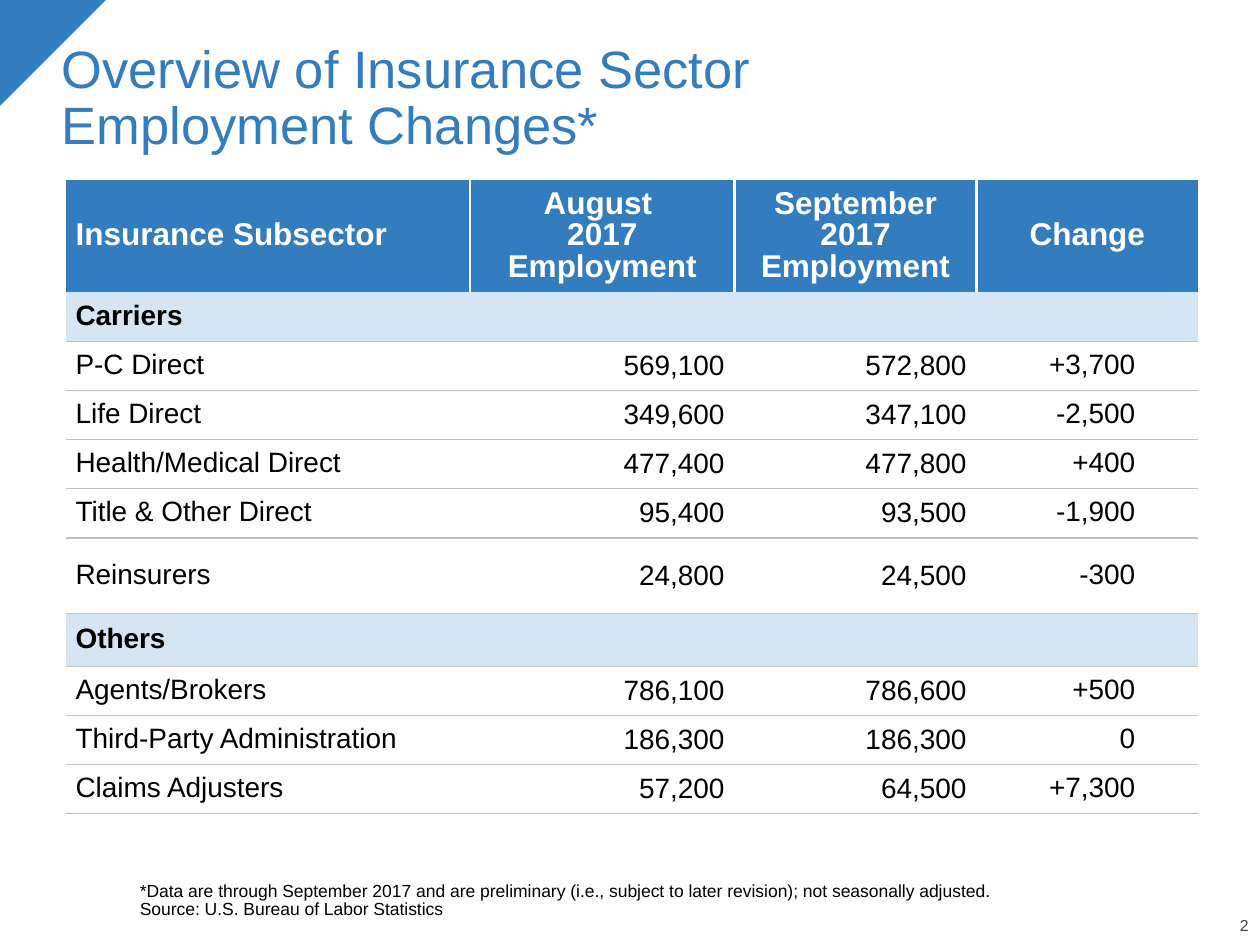
from typing import NamedTuple

from lxml import etree
from pptx import Presentation
from pptx.dml.color import RGBColor
from pptx.enum import shapes, text
from pptx.oxml import ns
from pptx.util import Inches, Pt

BLUE = RGBColor(0x33, 0x7D, 0xBE)
PALE_BLUE = RGBColor(0xD5, 0xE5, 0xF4)
GRAY = RGBColor(0xBF, 0xBF, 0xBF)
DARK_GRAY = RGBColor(0x40, 0x40, 0x40)
WHITE = RGBColor(0xFF, 0xFF, 0xFF)
BLACK = RGBColor(0, 0, 0)

LEFT, CENTER, RIGHT = text.PP_ALIGN.LEFT, text.PP_ALIGN.CENTER, text.PP_ALIGN.RIGHT
BOTTOM, MIDDLE = text.MSO_ANCHOR.BOTTOM, text.MSO_ANCHOR.MIDDLE
NO_GRID_STYLE = "{2D5ABB26-0587-4C30-8999-92F81FD0307C}"
COLUMN_WIDTHS = (3.21, 2.10, 1.92, 1.76)


class Row(NamedTuple):
    label: str
    august: str = ""
    september: str = ""
    change: str = ""
    height: float = 0.39

    @property
    def is_section(self) -> bool:
        return not self.august


HEADER = Row("Insurance Subsector", "August \v2017\nEmployment",
             "September\v2017\nEmployment", "Change", 0.89)
ROWS = (
    Row("Carriers"),
    Row("P-C Direct", "569,100", "572,800", "+3,700"),
    Row("Life Direct", "349,600", "347,100", "-2,500"),
    Row("Health/Medical Direct", "477,400", "477,800", "+400"),
    Row("Title & Other Direct", "95,400", "93,500", "-1,900"),
    Row("Reinsurers", "24,800", "24,500", "-300", 0.6),
    Row("Others", height=0.42),
    Row("Agents/Brokers", "786,100", "786,600", "+500"),
    Row("Third-Party Administration", "186,300", "186,300", "0"),
    Row("Claims Adjusters", "57,200", "64,500", "+7,300"),
)


def write(frame, content: str, *, size: float, color: RGBColor, bold: bool = False,
          align=LEFT, spacing: float = 0.9) -> None:
    for index, line in enumerate(content.split("\n")):
        paragraph = frame.add_paragraph() if index else frame.paragraphs[0]
        paragraph.text = line
        paragraph.alignment = align
        paragraph.line_spacing = spacing
        for run in paragraph.runs:
            run.font.name = "Arial"
            run.font.size = Pt(size)
            run.font.bold = bold
            run.font.color.rgb = color


def add_label(slide, box: tuple, content: str, **style) -> None:
    """Add a bottom-anchored text box without insets."""
    frame = slide.shapes.add_textbox(*map(Inches, box)).text_frame
    frame.word_wrap = True
    frame.vertical_anchor = BOTTOM
    frame.margin_left = frame.margin_right = frame.margin_top = frame.margin_bottom = 0
    write(frame, content, **style)


def set_border(cell, side: str, color: RGBColor, width: float) -> None:
    line = etree.Element(ns.qn(f"a:ln{side}"), w=str(Pt(width)))
    fill = etree.SubElement(line, ns.qn("a:solidFill"))
    etree.SubElement(fill, ns.qn("a:srgbClr"), val=str(color))
    properties = cell._tc.get_or_add_tcPr()
    position = sum(child.tag.startswith(ns.qn("a:ln")) for child in properties)
    properties.insert(position, line)


def fill_cell(cell, row: Row, column: int) -> None:
    is_header = row is HEADER
    content = row[column]
    cell.vertical_anchor = MIDDLE
    cell.margin_left = Inches(0.08)
    cell.margin_right = Inches(0.5 if column == 3 and not is_header else 0.08)
    cell.margin_top = cell.margin_bottom = Inches(0.06 if content else 0)

    if is_header or row.is_section:
        cell.fill.solid()
        cell.fill.fore_color.rgb = BLUE if is_header else PALE_BLUE
    else:
        cell.fill.background()

    if is_header:
        if column > 0:
            set_border(cell, "L", WHITE, 1.5)
        if column < 3:
            set_border(cell, "R", WHITE, 1.5)
    else:
        set_border(cell, "B", GRAY, 1)

    if content:
        write(cell.text_frame, content,
              size=18 if is_header else 16,
              color=WHITE if is_header else BLACK,
              bold=is_header or row.is_section,
              align=LEFT if column == 0 else CENTER if is_header else RIGHT,
              spacing=1.0 if column in (1, 2) and not is_header else 0.9)


def add_employment_table(slide) -> None:
    rows = (HEADER, *ROWS)
    frame = slide.shapes.add_table(
        len(rows), len(COLUMN_WIDTHS), Inches(0.52), Inches(1.43),
        Inches(sum(COLUMN_WIDTHS)), Inches(sum(row.height for row in rows)))
    table = frame.table
    table.horz_banding = False
    table._tbl.tblPr.find(ns.qn("a:tableStyleId")).text = NO_GRID_STYLE
    for column, width in zip(table.columns, COLUMN_WIDTHS):
        column.width = Inches(width)
    for index, row in enumerate(rows):
        table.rows[index].height = Inches(row.height)
        for column in range(len(COLUMN_WIDTHS)):
            fill_cell(table.cell(index, column), row, column)


def add_corner(slide) -> None:
    corner = slide.shapes.add_shape(
        shapes.MSO_SHAPE.RIGHT_TRIANGLE, 0, 0, Inches(0.84), Inches(0.84))
    corner.rotation = 90
    corner.shadow.inherit = False
    corner.fill.solid()
    corner.fill.fore_color.rgb = BLUE
    corner.line.fill.background()


def set_title(slide) -> None:
    title = slide.shapes.title
    title.left, title.top = Inches(0.39), Inches(0.25)
    title.width, title.height = Inches(9.25), Inches(1.04)
    title.text_frame.auto_size = text.MSO_AUTO_SIZE.NONE
    title.text_frame.vertical_anchor = BOTTOM
    write(title.text_frame, "Overview of Insurance Sector \vEmployment Changes*",
          size=30, color=BLUE)


def main() -> None:
    presentation = Presentation()
    presentation.slide_width, presentation.slide_height = Inches(10), Inches(7.5)
    slide = presentation.slides.add_slide(presentation.slide_layouts[5])
    add_corner(slide)
    set_title(slide)
    add_employment_table(slide)
    add_label(slide, (1.11, 6.85, 8.4, 0.45),
              "*Data are through September 2017 and are preliminary (i.e., subject to "
              "later revision); not seasonally adjusted.\v"
              "Source: U.S. Bureau of Labor Statistics", size=10, color=BLACK)
    add_label(slide, (9.43, 7.29, 0.48, 0.13), "2", size=9, color=DARK_GRAY, align=RIGHT)
    presentation.save("out.pptx")


if __name__ == "__main__":
    main()
